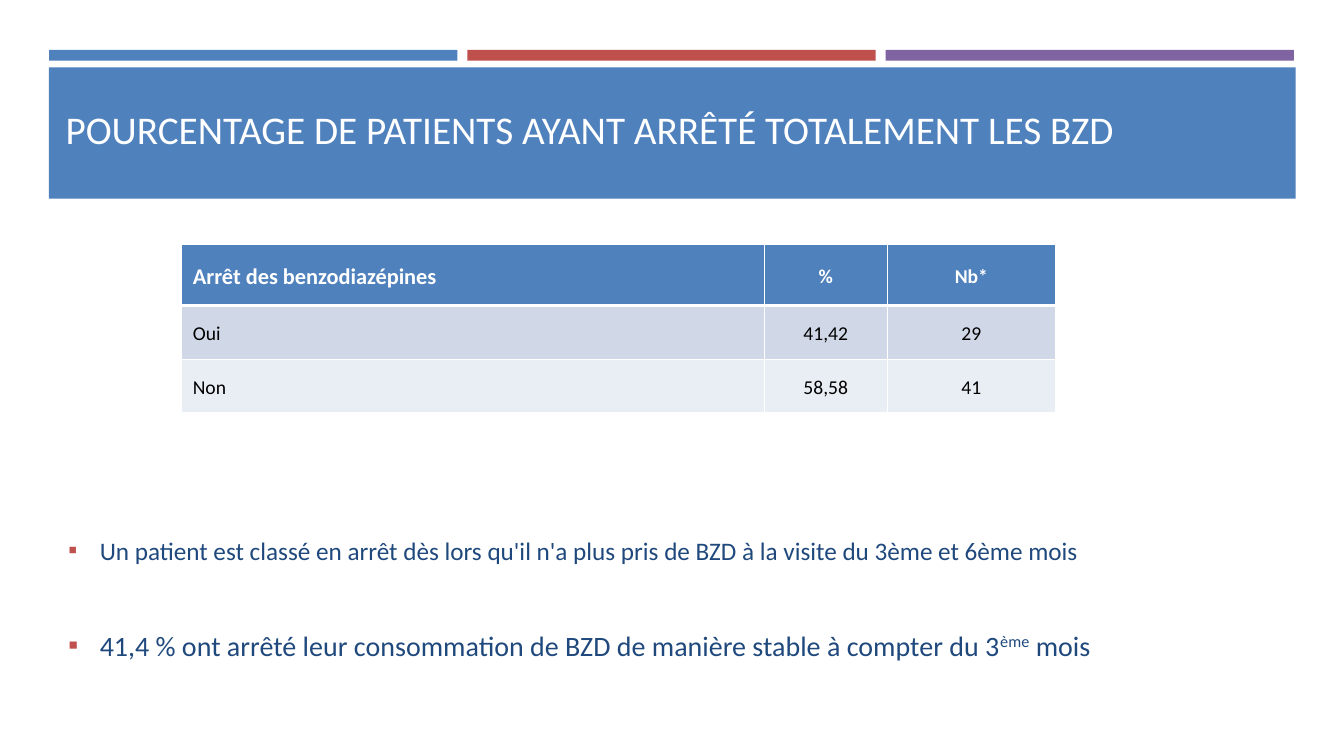
from dataclasses import dataclass

from lxml import etree
from pptx import Presentation
from pptx.dml.color import RGBColor
from pptx.enum import shapes, text
from pptx.oxml import ns
from pptx.util import Cm, Pt


@dataclass(frozen=True)
class Theme:
    font: str = "Calibri"
    blue: str = "4F81BD"
    red: str = "C0504D"
    purple: str = "8064A2"
    navy: str = "1F497D"
    white: str = "FFFFFF"
    black: str = "000000"
    row_fills: tuple = ("4F81BD", "D0D8E8", "E9EDF4")
    title_size: int = 28
    criterion_size: int = 18
    result_size: int = 20
    header_size: int = 16
    cell_size: int = 14


THEME = Theme()


def style_run(run, size, color, bold=False):
    formats = {"name": THEME.font, "size": Pt(size), "bold": bold}
    for attribute, value in formats.items():
        setattr(run.font, attribute, value)
    run.font.color.rgb = RGBColor.from_string(color)


def add_block(left, top, width, height, color):
    """Draw a plain filled rectangle, measured in centimetres."""
    block = slide.shapes.add_shape(
        shapes.MSO_SHAPE.RECTANGLE, Cm(left), Cm(top), Cm(width), Cm(height))
    block.shadow.inherit = False
    block.fill.solid()
    block.fill.fore_color.rgb = RGBColor.from_string(color)
    block.line.fill.background()
    return block


prs = Presentation()
prs.slide_width, prs.slide_height = Cm(33.87), Cm(19.05)
slide = prs.slides.add_slide(prs.slide_layouts.get_by_name("Two Content"))
title, criterion, result = slide.placeholders

# Coloured strips and title band
for i, color in enumerate((THEME.blue, THEME.red, THEME.purple)):
    add_block(1.24 + 10.54 * i, 1.26, 10.29, 0.27, color)
band = add_block(1.23, 1.7, 31.42, 3.31, THEME.blue)

# Title, in front of the band
band.element.addnext(title.element)
title.left, title.top, title.width, title.height = Cm(1.4), Cm(1.7), Cm(31.06), Cm(2.26)
title.text_frame.auto_size = text.MSO_AUTO_SIZE.NONE
title.text_frame.vertical_anchor = text.MSO_ANCHOR.BOTTOM
heading = title.text_frame.paragraphs[0]
heading.alignment = text.PP_ALIGN.LEFT
heading_run = heading.add_run()
heading_run.text = "POURCENTAGE DE PATIENTS AYANT ARRÊTÉ TOTALEMENT LES BZD"
style_run(heading_run, THEME.title_size, THEME.white)

# Results table
rows = [
    ("Arrêt des benzodiazépines", "%", "Nb*"),
    ("Oui", "41,42", "29"),
    ("Non", "58,58", "41"),
]
column_widths = (14.68, 3.1, 4.24)
row_heights = (1.55, 1.35, 1.35)
table = slide.shapes.add_table(
    len(rows), len(column_widths), Cm(4.58), Cm(6.15),
    Cm(sum(column_widths)), Cm(sum(row_heights))).table
for column, width in zip(table.columns, column_widths):
    column.width = Cm(width)
for row, height in zip(table.rows, row_heights):
    row.height = Cm(height)

cell_format = {
    "margin_left": Cm(0.28), "margin_right": Cm(0.28),
    "margin_top": 0, "margin_bottom": 0,
    "vertical_anchor": text.MSO_ANCHOR.MIDDLE,
}
paragraph_format = {"line_spacing": 1.15, "space_before": Pt(4), "space_after": Pt(4)}
for r, values in enumerate(rows):
    for c, value in enumerate(values):
        cell = table.cell(r, c)
        for attribute, setting in cell_format.items():
            setattr(cell, attribute, setting)
        cell.fill.solid()
        cell.fill.fore_color.rgb = RGBColor.from_string(THEME.row_fills[r])

        paragraph = cell.text_frame.paragraphs[0]
        for attribute, setting in paragraph_format.items():
            setattr(paragraph, attribute, setting)
        paragraph.alignment = text.PP_ALIGN.CENTER if c else text.PP_ALIGN.LEFT
        run = paragraph.add_run()
        run.text = value
        style_run(run, THEME.header_size if r == c == 0 else THEME.cell_size,
                  THEME.black if r else THEME.white, bold=r == 0)

        # A thick rule parts the header from the rows below
        thick_side = {0: "lnB", 1: "lnT"}.get(r)
        properties = cell._tc.get_or_add_tcPr()
        for position, side in enumerate(("lnL", "lnR", "lnT", "lnB")):
            border = etree.Element(
                ns.qn(f"a:{side}"), w=str(Pt(3 if side == thick_side else 1)))
            fill = etree.SubElement(border, ns.qn("a:solidFill"))
            etree.SubElement(fill, ns.qn("a:srgbClr"), val=THEME.white)
            properties.insert(position, border)

# Bulleted findings: placeholder, top, width, height, size, (words, superscript)
findings = [
    (criterion, 13.36, 29.41, 1.02, THEME.criterion_size, [
        ("Un patient est classé en arrêt dès lors qu'il n'a plus pris de BZD "
         "à la visite du 3ème et 6ème mois", False)]),
    (result, 15.7, 31.17, 1.12, THEME.result_size, [
        ("41,4 % ont arrêté leur consommation de BZD de manière stable "
         "à compter du 3", False),
        ("ème", True),
        (" mois", False)]),
]
for finding, top, width, height, size, pieces in findings:
    finding.left, finding.top = Cm(1.47), Cm(top)
    finding.width, finding.height = Cm(width), Cm(height)
    finding.text_frame.auto_size = text.MSO_AUTO_SIZE.NONE
    paragraph = finding.text_frame.paragraphs[0]
    paragraph.space_before = Pt(0)
    for words, superscript in pieces:
        run = paragraph.add_run()
        run.text = words
        style_run(run, size, THEME.navy)
        if superscript:
            run._r.get_or_add_rPr().set("baseline", "30000")

    bullet = paragraph._p.get_or_add_pPr()
    bullet.set("marL", str(Cm(0.79)))
    bullet.set("indent", str(-Cm(0.79)))
    bullet_color = etree.SubElement(bullet, ns.qn("a:buClr"))
    etree.SubElement(bullet_color, ns.qn("a:srgbClr"), val=THEME.red)
    etree.SubElement(bullet, ns.qn("a:buFont"), typeface=THEME.font)
    etree.SubElement(bullet, ns.qn("a:buChar"), char="▪")

prs.save("out.pptx")
